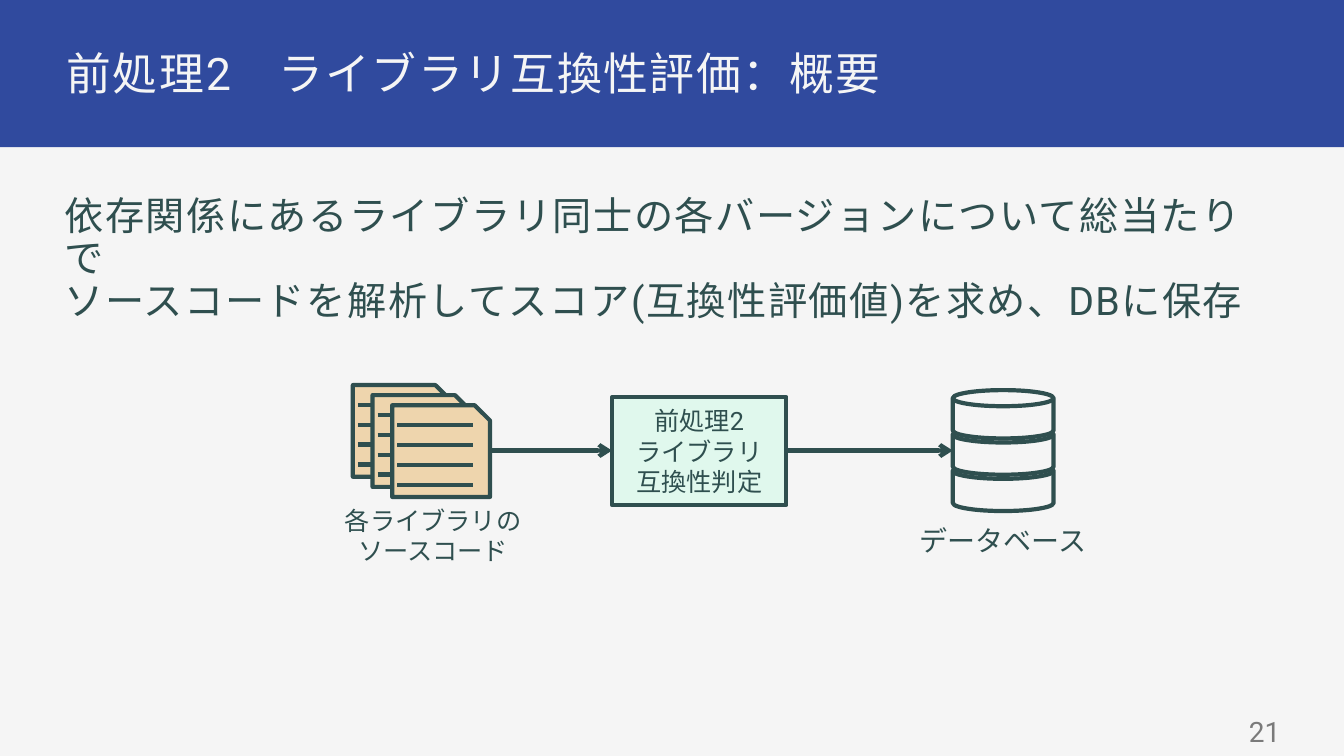
from lxml.etree import SubElement
from pptx import Presentation
from pptx.dml.color import RGBColor
from pptx.enum.shapes import MSO_CONNECTOR, MSO_SHAPE
from pptx.enum.text import MSO_ANCHOR, PP_ALIGN
from pptx.oxml.ns import qn
from pptx.util import Inches, Pt

CJK = "Noto Sans CJK JP"
DARK, LIGHT, BLUE = "2F4F4F", "F5F5F5", "304A9E"
MINT, SAND, GREY = "E0F8ED", "EED5AD", "7A7A7A"

BAND = (-0.03, -0.02, 13.39, 1.48)
# box, paragraphs, format
TEXTS = [
    ((0.58, 0.43, 12.18, 0.59), ["前処理2\u3000ライブラリ互換性評価：概要"],
     dict(size=32, color=LIGHT, align=PP_ALIGN.JUSTIFY, before=16, line=0.9,
          spacing=110, inset=0.08)),
    ((0.58, 1.89, 12.18, 5.18),
     ["依存関係にあるライブラリ同士の各バージョンについて総当たりで\v"
      "ソースコードを解析してスコア(互換性評価値)を求め、DBに保存"],
     dict(size=28, align=PP_ALIGN.LEFT, before=14, line=0.9, spacing=110,
          inset=0.06)),
    ((9.01, 5.14, 1.88, 0.44), ["データベース"], dict(size=20, font=CJK)),
    ((3.22, 4.96, 2.15, 0.71), ["各ライブラリの\vソースコード"],
     dict(size=18, font=CJK)),
    ((9.76, 7.06, 3, 0.39), ["21"],
     dict(size=20, color=GREY, align=PP_ALIGN.RIGHT, inset=0.06,
          anchor=MSO_ANCHOR.MIDDLE)),
]
STEP_BOX = (6.07, 3.94, 1.73, 1.07)
STEP_LINES = ["前処理2", "ライブラリ", "互換性判定"]
ARROWS = [(4.87, 6.07), (7.8, 9.45)]
ARROW_Y = 4.47
DISK, DISK_STEP, DISK_COUNT = (9.45, 3.87, 1, 0.48), 0.36, 3
PAGE, PAGE_STEP, PAGE_COUNT = (3.5, 3.82, 0.97, 0.91), (0.195, 0.1), 3
RULE_INSET, RULE_WIDTH, RULE_STEP, RULE_COUNT = 0.05, 0.75, 0.197, 4


def rgb(color):
    return RGBColor.from_string(color)


def write(sp, paragraphs, size, color=DARK, font="Roboto",
          align=PP_ALIGN.CENTER, before=0, line=None, spacing=None,
          inset=None, anchor=MSO_ANCHOR.TOP):
    tf = sp.text_frame
    frame = dict(word_wrap=True, vertical_anchor=anchor)
    if inset is not None:
        for side in ("left", "right", "top", "bottom"):
            frame[f"margin_{side}"] = Inches(inset)
    for name, value in frame.items():
        setattr(tf, name, value)
    for i, text in enumerate(paragraphs):
        p = tf.add_paragraph() if i else tf.paragraphs[0]
        p.text = text
        for name, value in dict(alignment=align, line_spacing=line,
                                space_before=Pt(before)).items():
            setattr(p, name, value)
        for r in p.runs:
            for name, value in dict(size=Pt(size), name=font).items():
                setattr(r.font, name, value)
            r.font.color.rgb = rgb(color)
            rPr = r._r.get_or_add_rPr()
            SubElement(rPr, qn("a:ea")).set("typeface", CJK)
            if spacing:
                rPr.set("spc", str(spacing))


def add_shape(shapes, kind, box, fill, outline=DARK):
    sp = shapes.add_shape(kind, *map(Inches, box))
    sp.shadow.inherit = False
    sp.fill.solid()
    sp.fill.fore_color.rgb = rgb(fill)
    if outline:
        sp.line.color.rgb = rgb(outline)
        sp.line.width = Pt(3)
    else:
        sp.line.fill.background()
    return sp


def add_line(shapes, x1, x2, y, arrow=False):
    line = shapes.add_connector(MSO_CONNECTOR.STRAIGHT,
                                *map(Inches, (x1, y, x2, y)))
    line.line.color.rgb = rgb(DARK)
    line.line.width = Pt(3)
    if arrow:
        SubElement(line.line._get_or_add_ln(), qn("a:tailEnd")).set("type", "arrow")
    SubElement(line._element.spPr, qn("a:effectLst"))


def add_database(slide):
    """Stack the disks from the bottom up, so that upper ones overlap lower ones."""
    group = slide.shapes.add_group_shape()
    x, y, w, h = DISK
    for i in reversed(range(DISK_COUNT)):
        add_shape(group.shapes, MSO_SHAPE.FLOWCHART_MAGNETIC_DISK,
                  (x, y + i * DISK_STEP, w, h), LIGHT)


def add_source_pages(slide):
    left, top, w, h = PAGE
    for i in range(PAGE_COUNT):
        group = slide.shapes.add_group_shape()
        x, y = left + i * PAGE_STEP[0], top + i * PAGE_STEP[1]
        add_shape(group.shapes, MSO_SHAPE.SNIP_1_RECTANGLE, (x, y, w, h), SAND)
        for j in range(1, RULE_COUNT + 1):
            add_line(group.shapes, x + RULE_INSET, x + RULE_INSET + RULE_WIDTH,
                     y + j * RULE_STEP)


def main():
    prs = Presentation()
    prs.slide_width, prs.slide_height = Inches(13.33), Inches(7.5)
    s = prs.slides.add_slide(prs.slide_layouts[6])
    s.background.fill.solid()
    s.background.fill.fore_color.rgb = rgb(LIGHT)

    add_shape(s.shapes, MSO_SHAPE.RECTANGLE, BAND, BLUE, outline=None)
    for box, paragraphs, style in TEXTS:
        write(s.shapes.add_textbox(*map(Inches, box)), paragraphs, **style)
    add_database(s)
    step = add_shape(s.shapes, MSO_SHAPE.RECTANGLE, STEP_BOX, MINT)
    write(step, STEP_LINES, size=18, anchor=MSO_ANCHOR.MIDDLE)
    for x1, x2 in ARROWS:
        add_line(s.shapes, x1, x2, ARROW_Y, arrow=True)
    add_source_pages(s)
    prs.save("out.pptx")


if __name__ == "__main__":
    main()
